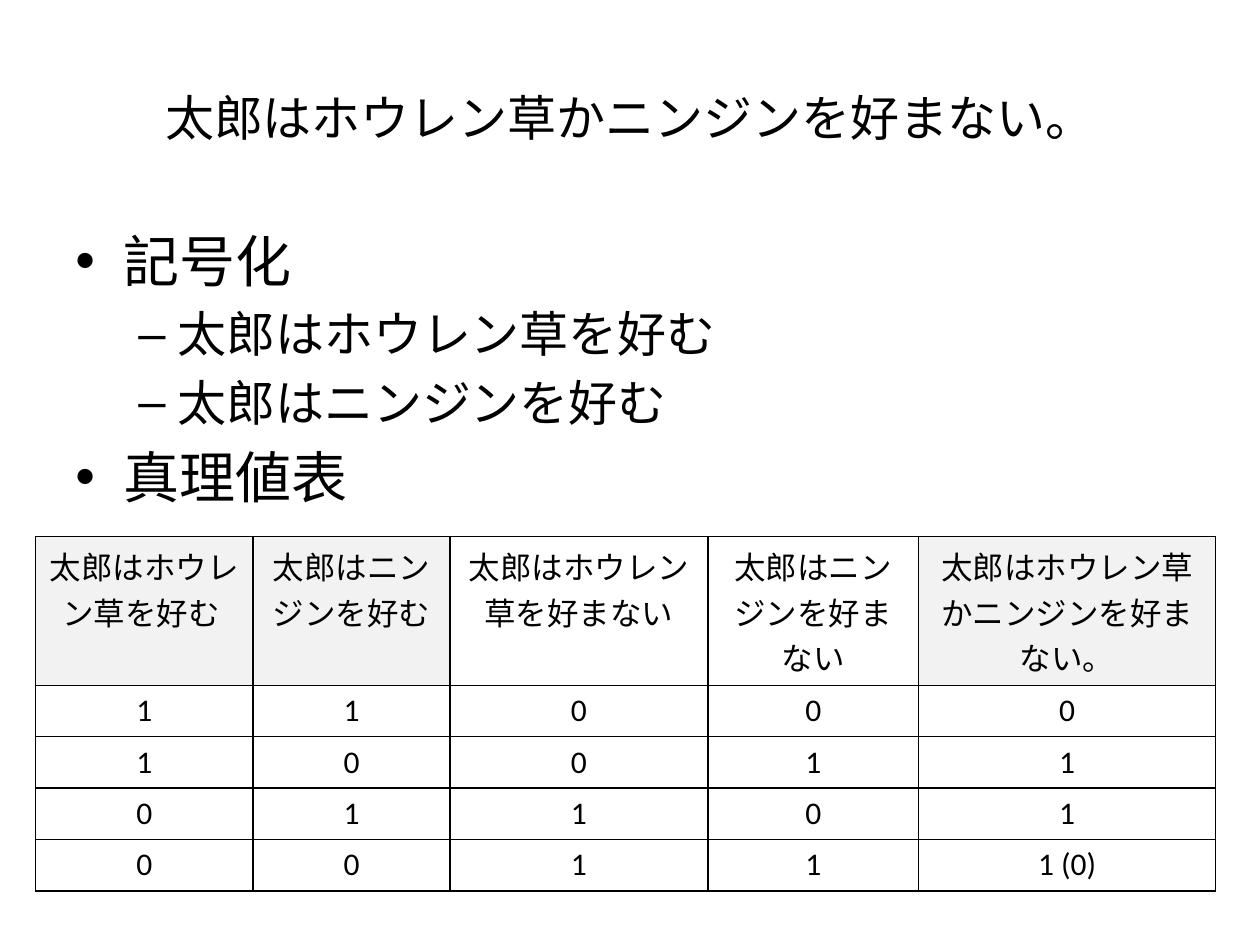
from pptx import Presentation
from pptx.dml.color import RGBColor
from pptx.enum.text import MSO_ANCHOR, PP_ALIGN
from pptx.oxml import parse_xml
from pptx.oxml.ns import nsdecls
from pptx.util import Inches, Pt

FONT = "Calibri"
COLORS = {"ink": "000000", "shade": "F2F2F2"}

TITLE = "太郎はホウレン草かニンジンを好まない。"
OUTLINE = [
    (0, "記号化"),
    (1, "太郎はホウレン草を好む"),
    (1, "太郎はニンジンを好む"),
    (0, "真理値表"),
]
# Per level: bullet, text size, left margin and hanging indent in inches
LEVELS = [("•", 32, 0.38, 0.38), ("–", 28, 0.81, 0.31)]

HEADERS = [
    "太郎はホウレン草を好む ",
    "太郎はニンジンを好む",
    "太郎はホウレン草を好まない",
    "太郎はニンジンを好まない",
    TITLE,
]
TRUTH_ROWS = [
    ["1", "1", "0", "0", "0"],
    ["1", "0", "0", "1", "1"],
    ["0", "1", "1", "0", "1"],
    ["0", "0", "1", "1", "1 (0)"],
]
COLUMN_WIDTHS = [1.73, 1.56, 2.05, 1.67, 2.36]
SHADED_HEADERS = {0, 1, 4}
HEADER_HEIGHT = 1.18  # room for three lines of text


def write(paragraph, text, size, align):
    paragraph.alignment = align
    run = paragraph.add_run()
    run.text = text
    for name, value in {"name": FONT, "size": Pt(size)}.items():
        setattr(run.font, name, value)
    run.font.color.rgb = RGBColor.from_string(COLORS["ink"])


def add_frame(slide, box, anchor):
    frame = slide.shapes.add_textbox(*map(Inches, box)).text_frame
    frame.word_wrap = True
    frame.vertical_anchor = anchor
    return frame


def add_title(slide, box):
    frame = add_frame(slide, box, MSO_ANCHOR.MIDDLE)
    write(frame.paragraphs[0], TITLE, 28, PP_ALIGN.CENTER)


def add_outline(slide, box):
    frame = add_frame(slide, box, MSO_ANCHOR.TOP)
    for index, (level, text) in enumerate(OUTLINE):
        bullet, size, margin, hanging = LEVELS[level]
        paragraph = frame.add_paragraph() if index else frame.paragraphs[0]
        paragraph.level = level
        paragraph.space_before = Pt(0.2 * size)
        write(paragraph, text, size, PP_ALIGN.LEFT)
        # Hanging bullet
        props = paragraph._p.get_or_add_pPr()
        props.set("marL", str(Inches(margin)))
        props.set("indent", str(-Inches(hanging)))
        props.append(parse_xml(f'<a:buFont {nsdecls("a")} typeface="Arial"/>'))
        props.append(parse_xml(f'<a:buChar {nsdecls("a")} char="{bullet}"/>'))


def add_borders(cell):
    props = cell._tc.get_or_add_tcPr()
    for position, side in enumerate(("lnL", "lnR", "lnT", "lnB")):
        props.insert(position, parse_xml(
            f'<a:{side} {nsdecls("a")} w="{Pt(1)}"><a:solidFill>'
            f'<a:srgbClr val="{COLORS["ink"]}"/></a:solidFill></a:{side}>'))


def add_truth_table(slide, box):
    rows = [HEADERS] + TRUTH_ROWS
    table = slide.shapes.add_table(
        len(rows), len(HEADERS), *map(Inches, box)).table
    table.horz_banding = False
    for column, width in zip(table.columns, COLUMN_WIDTHS):
        column.width = Inches(width)
    # The value rows share the height below the header
    value_height = (box[3] - HEADER_HEIGHT) / len(TRUTH_ROWS)
    for r, values in enumerate(rows):
        table.rows[r].height = Inches(value_height if r else HEADER_HEIGHT)
        for c, value in enumerate(values):
            cell = table.cell(r, c)
            write(cell.text_frame.paragraphs[0], value, 18, PP_ALIGN.CENTER)
            if r == 0 and c in SHADED_HEADERS:
                cell.fill.solid()
                cell.fill.fore_color.rgb = RGBColor.from_string(COLORS["shade"])
            else:
                cell.fill.background()
            add_borders(cell)


def main():
    deck = Presentation()
    deck.slide_width, deck.slide_height = Inches(10), Inches(7.5)
    slide = deck.slides.add_slide(deck.slide_layouts[6])
    add_title(slide, (0.5, 0.3, 9, 1.25))
    add_outline(slide, (0.5, 1.75, 9, 4.95))
    add_truth_table(slide, (0.28, 4.26, 9.37, 2.81))
    deck.save("out.pptx")


if __name__ == "__main__":
    main()
